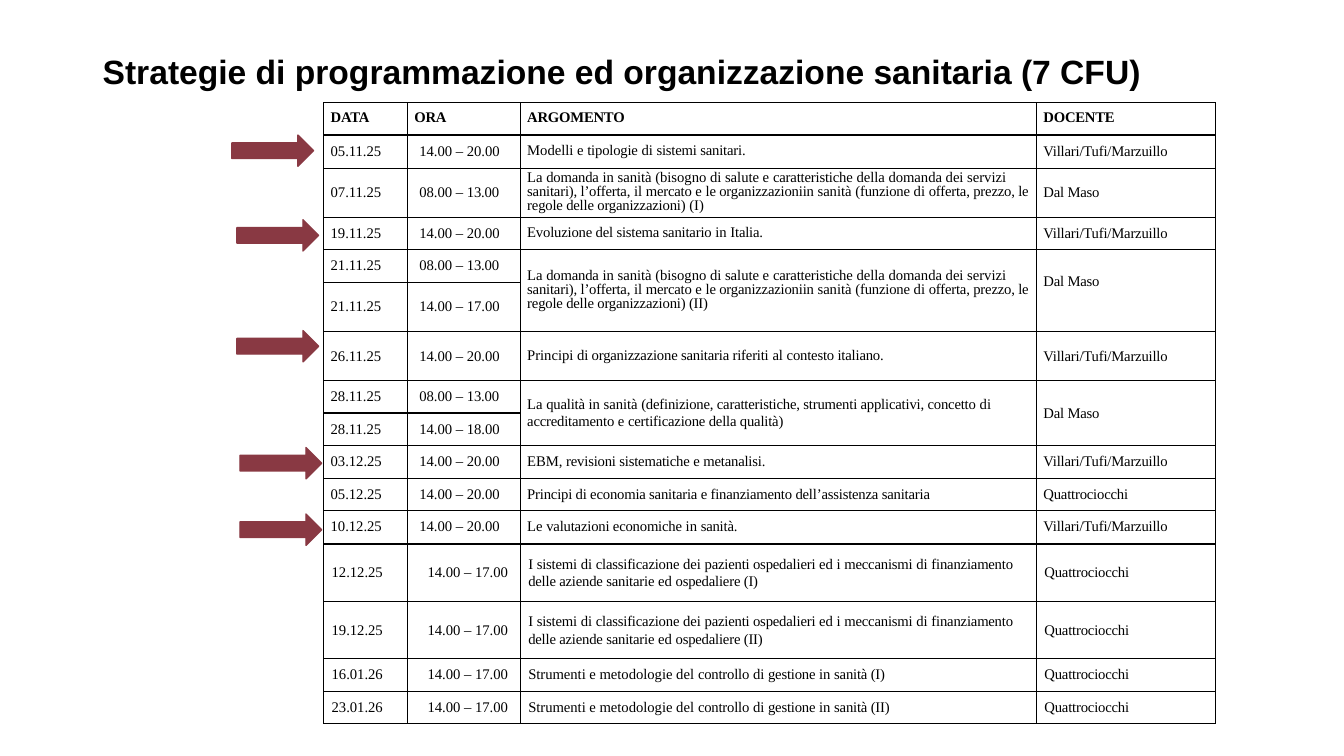
from dataclasses import dataclass

from lxml.etree import SubElement
from pptx import Presentation
from pptx.dml.color import RGBColor
from pptx.enum.shapes import MSO_SHAPE
from pptx.enum.text import MSO_ANCHOR, PP_ALIGN
from pptx.oxml.ns import qn
from pptx.util import Emu, Pt

BLACK = RGBColor(0x00, 0x00, 0x00)
BURGUNDY = RGBColor(0x89, 0x39, 0x43)
EMU_PER_PX = 9144  # 100 px to the inch
TIGHT = "-10"  # letter spacing in hundredths of a point

COLUMN_WIDTHS = (83, 112, 512, 178)
ARROW_POSITIONS = ((230, 134), (235, 218), (235, 328), (238, 444), (238, 510))

VILLARI = "|Villari/Tufi/Marzuillo"
DAL_MASO = "|Dal Maso"
QUATTRO = "|Quattrociocchi"

# Topics: each "|" switches between normal and tight letter spacing
DEMAND = (
    "La |domanda| in sanità (bisogno di salute e |caratteristiche| della domanda dei servizi "
    "|sanitari), l’offerta, |il |mercato |e |le organizzazioniin |sanità |(funzione| di "
    "|offerta, prezzo, le regole delle organizzazioni) "
)
QUALITY = (
    "La |qualità |in sanità| (definizione, caratteristiche, strumenti applicativi, concetto "
    "|di |accreditamento |e |certificazione della qualità)"
)
PATIENTS = (
    "I |sistemi |di |classificazione |dei |pazienti ospedalieri |ed i |meccanismi| di "
    "|finanziamento delle aziende sanitarie |ed |ospedaliere "
)
CONTROL = "Strumenti e metodologie del |controllo |di |gestione |in |sanità "


@dataclass(frozen=True)
class Lesson:
    date: str
    hours: str
    topic: str
    teacher: str
    height: int = 32
    topic_spacing: float | Pt | None = None
    spacing: Pt | None = None
    late: bool = False  # lessons of the last block: centred hours
    topic_right: int = 0
    teacher_bottom: int = 0
    rows: int = 1  # rows shared by topic and teacher
    bold: bool = False


EXACT = Pt(10.1)
WIDE = Pt(10.3)
LESSONS = (
    Lesson("|DATA", "|ORA", "|ARGOMENTO", "|DOCENTE", 32, WIDE, WIDE, bold=True),
    Lesson("05.11.25", "14.00 – 20.00", "Modelli e |tipologie |di |sistemi sanitari.",
           VILLARI, 33, EXACT),
    Lesson("07.11.25", "08.00 – |13.00", DEMAND + "|(I)", DAL_MASO, 49, EXACT),
    Lesson("19.11.25", "14.00 – 20.00",
           "|Evoluzione del sistema sanitario |in |Italia.", VILLARI, 32, EXACT),
    Lesson("21.11.25", "08.00 – |13.00", DEMAND + "(II)", DAL_MASO, 32, EXACT,
           rows=2, teacher_bottom=18),
    Lesson("21.11.25", "14.00 – 17.00", "", "", 49),
    Lesson("26.11.25", "14.00 – 20.00",
           "Principi |di organizzazione sanitaria riferiti |al |contesto italiano.",
           VILLARI, 49, EXACT),
    Lesson("28.11.25", "08.00 – |13.00", QUALITY, DAL_MASO, rows=2),
    Lesson("28.11.25", "14.00 – 18.00", "", ""),
    Lesson("03.12.25", "14.00 – 20.00", "EBM, |revisioni sistematiche |e| metanalisi.",
           VILLARI, 33),
    Lesson("05.12.25", "14.00 – 20.00",
           "|Principi di economia sanitaria e finanziamento dell’assistenza sanitaria", QUATTRO),
    Lesson("10.12.25", "14.00 – 20.00", "Le |valutazioni economiche |in |sanità.",
           VILLARI, 33, WIDE, WIDE),
    Lesson("12.12.25", "14.00 – 17.00", PATIENTS + "(I)", QUATTRO, 57, 1.07,
           late=True, topic_right=20),
    Lesson("19.12.25", "14.00 – 17.00", PATIENTS + "(II)", QUATTRO, 57, 1.07,
           late=True, topic_right=20),
    Lesson("16.01.26", "14.00 – 17.00", CONTROL + "(I)", QUATTRO, late=True),
    Lesson("23.01.26", "14.00 – 17.00", CONTROL + "(II)", QUATTRO, late=True),
)


def px(length: int) -> Emu:
    return Emu(length * EMU_PER_PX)


def add_title(slide, text: str) -> None:
    frame = slide.shapes.add_textbox(px(92), px(0), px(1150), px(145)).text_frame
    frame.word_wrap = True
    frame.vertical_anchor = MSO_ANCHOR.MIDDLE
    frame.text = text
    heading = frame.paragraphs[0]
    heading.line_spacing = 0.9
    font = heading.runs[0].font
    font.name, font.size, font.bold = "Arial", Pt(24), True
    font.color.rgb = BLACK


def add_arrow(slide, left: int, top: int) -> None:
    arrow = slide.shapes.add_shape(MSO_SHAPE.RIGHT_ARROW, px(left), px(top), px(81), px(31))
    arrow.shadow.inherit = False
    arrow.fill.solid()
    arrow.fill.fore_color.rgb = BURGUNDY
    arrow.line.color.rgb = BURGUNDY
    arrow.line.width = Pt(1)


def draw_borders(cell) -> None:
    properties = cell._tc.get_or_add_tcPr()
    for position, side in enumerate(("lnL", "lnR", "lnT", "lnB")):
        border = SubElement(properties, qn(f"a:{side}"), w=str(Pt(1)))
        fill = SubElement(border, qn("a:solidFill"))
        SubElement(fill, qn("a:srgbClr"), val=str(BLACK))
        properties.insert(position, border)


def write_cell(cell, text: str, bold: bool, spacing: float | Pt | None) -> None:
    paragraph = cell.text_frame.paragraphs[0]
    if spacing is not None:
        paragraph.line_spacing = spacing
    for index, piece in enumerate(text.split("|")):
        if not piece:
            continue
        run = paragraph.add_run()
        run.text = piece
        font = run.font
        font.name, font.size, font.bold = "Times New Roman", Pt(10.5), bold
        font.color.rgb = BLACK
        if index % 2:
            run._r.get_or_add_rPr().set("spc", TIGHT)


def add_schedule(slide) -> None:
    total_height = sum(lesson.height for lesson in LESSONS)
    table = slide.shapes.add_table(
        len(LESSONS), len(COLUMN_WIDTHS), px(321), px(102),
        px(sum(COLUMN_WIDTHS)), px(total_height)).table
    table.first_row = table.horz_banding = False
    for column, width in zip(table.columns, COLUMN_WIDTHS):
        column.width = px(width)

    for row, lesson in enumerate(LESSONS):
        table.rows[row].height = px(lesson.height)
        indent = 8 if lesson.late else 7
        hours_indent = indent if lesson.late or lesson.bold else 12
        fields = (
            (lesson.date, indent, lesson.spacing),
            (lesson.hours, hours_indent, lesson.spacing),
            (lesson.topic, indent, lesson.topic_spacing),
            (lesson.teacher, indent, lesson.spacing),
        )
        for column, (text, left, spacing) in enumerate(fields):
            cell = table.cell(row, column)
            cell.fill.background()
            draw_borders(cell)
            cell.vertical_anchor = MSO_ANCHOR.MIDDLE
            cell.margin_left = px(left)
            cell.margin_right = cell.margin_top = cell.margin_bottom = 0
            write_cell(cell, text, lesson.bold, spacing)

        # Adjustments of single cells
        _, hours, topic, teacher = table.rows[row].cells
        topic.margin_right = px(lesson.topic_right)
        teacher.margin_bottom = px(lesson.teacher_bottom)
        if lesson.late:
            hours.text_frame.paragraphs[0].alignment = PP_ALIGN.CENTER
        if lesson.rows > 1:
            for column, shared in ((2, topic), (3, teacher)):
                shared.merge(table.cell(row + lesson.rows - 1, column))


def main() -> None:
    presentation = Presentation()
    presentation.slide_width, presentation.slide_height = px(1333), px(750)
    slide = presentation.slides.add_slide(presentation.slide_layouts[6])
    add_title(slide, "Strategie di programmazione ed organizzazione sanitaria (7 CFU)")
    for left, top in ARROW_POSITIONS:
        add_arrow(slide, left, top)
    add_schedule(slide)
    presentation.save("out.pptx")


if __name__ == "__main__":
    main()
